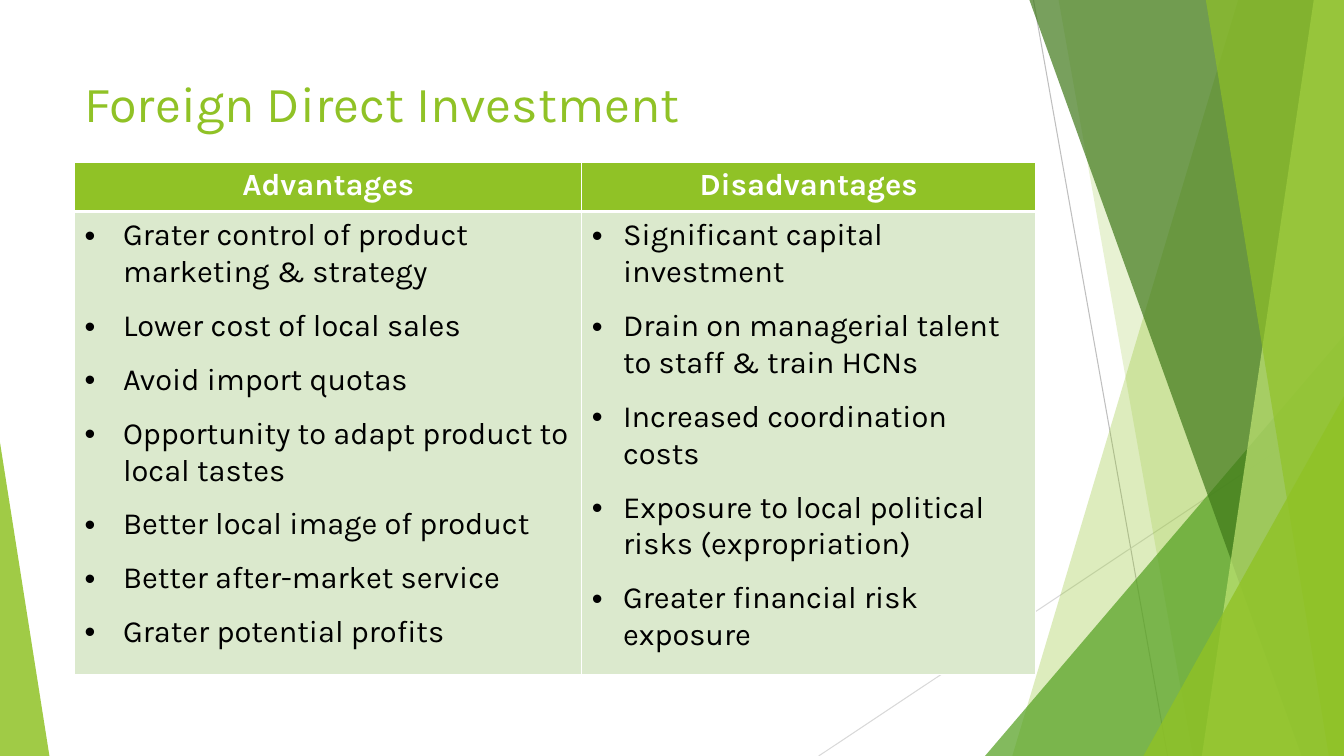
"""Build the Foreign Direct Investment slide with its two-column comparison table."""
import pptx
import pptx.dml.color
import pptx.enum.shapes
import pptx.enum.text
import pptx.oxml
import pptx.oxml.ns
import pptx.util
from pptx.util import Inches

GREEN = "90C226"
WIDTH, HEIGHT = 13.33, 7.5
NAMESPACE = pptx.oxml.ns.nsdecls("a")


def paint(fill, color):
    fill.solid()
    fill.fore_color.rgb = pptx.dml.color.RGBColor.from_string(color)


def write(paragraph, text, size=22, color="000000", bold=False, centered=False, indent=None):
    run = paragraph.add_run()
    run.text = text
    run.font.name = "Karla"
    run.font.size = pptx.util.Pt(size)
    run.font.bold = bold
    paint(run.font.fill, color)
    if centered:
        paragraph.alignment = pptx.enum.text.PP_ALIGN.CENTER
    if indent:
        paragraph.line_spacing = pptx.util.Pt(26.4)
        paragraph.space_before = paragraph.space_after = pptx.util.Pt(6)
        properties = paragraph._p.get_or_add_pPr()
        properties.set("marL", str(Inches(indent)))
        properties.set("indent", str(-Inches(indent)))
        for markup in ('<a:buFont {} typeface="Arial"/>', '<a:buChar {} char="•"/>'):
            properties.append(pptx.oxml.parse_xml(markup.format(NAMESPACE)))


presentation = pptx.Presentation()
presentation.slide_width = Inches(WIDTH)
presentation.slide_height = Inches(HEIGHT)
slide = presentation.slides.add_slide(presentation.slide_layouts[6])
shapes = slide.shapes

for start_x, start_y, end_x, color in [(10.25, 0, 11.58, "BFBFBF"), (WIDTH, 4.03, 8.12, "D9D9D9")]:
    line = shapes.add_connector(
        pptx.enum.shapes.MSO_CONNECTOR.STRAIGHT,
        Inches(start_x), Inches(start_y), Inches(end_x), Inches(HEIGHT))
    line.line.width = pptx.util.Pt(0.75)
    paint(line.line.fill, color)
    line._element.spPr.append(pptx.oxml.parse_xml(f"<a:effectLst {NAMESPACE}/>"))

bands = [
    ("band", 12.28, 10.04, GREEN, 30),
    ("band", 10.5, 11.83, GREEN, 20),
    ("triangle", 3.33, 9.77, "54A021", 72),
    ("band", 10.21, 12.91, "3F7819", 70),
    ("band", 13.03, 11.92, "C0E474", 70),
    ("band", 11.96, 13.18, GREEN, 65),
    ("triangle", 3.93, 11.34, GREEN, 80),
    ("left triangle", 4.39, 0, GREEN, 85),
]
for kind, top, left, color, opacity in bands:
    if kind == "band":
        corners = [(WIDTH, 0), (WIDTH, HEIGHT), (left, HEIGHT)]
        builder = shapes.build_freeform(Inches(top), 0)
        builder.add_line_segments([(Inches(x), Inches(y)) for x, y in corners], close=True)
        facet = builder.convert_to_shape()
    else:
        on_left = kind == "left triangle"
        facet = shapes.add_shape(
            pptx.enum.shapes.MSO_SHAPE.ISOSCELES_TRIANGLE, Inches(left), Inches(top),
            Inches(0.49 if on_left else WIDTH - left), Inches(HEIGHT - top))
        facet.adjustments[0] = 0 if on_left else 1
    paint(facet.fill, color)
    facet.line.fill.background()
    facet.shadow.inherit = False
    fill_color = facet._element.xpath("./p:spPr/a:solidFill/a:srgbClr")[0]
    fill_color.append(pptx.oxml.parse_xml(f'<a:alpha {NAMESPACE} val="{opacity * 1000}"/>'))

title = shapes.add_textbox(Inches(0.74), Inches(0.67), Inches(9.4), Inches(0.85))
title.text_frame.word_wrap = True
write(title.text_frame.paragraphs[0], "Foreign Direct Investment", size=36, color=GREEN)

columns = [
    ("Advantages", 5.03, 0.38, [
        "Grater control of product marketing & strategy",
        "Lower cost of local sales",
        "Avoid import quotas",
        "Opportunity to adapt product to local tastes",
        "Better local image of product",
        "Better after-market service",
        "Grater potential profits",
    ]),
    ("Disadvantages", 4.5, 0.31, [
        "Significant capital investment",
        "Drain on managerial talent to staff & train HCNs",
        "Increased coordination costs",
        "Exposure to local political risks (expropriation)",
        "Greater financial risk exposure",
    ]),
]
table = shapes.add_table(2, 2, Inches(0.74), Inches(1.61), Inches(9.53), Inches(5.08)).table
table.rows[0].height, table.rows[1].height = Inches(0.49), Inches(4.59)
for index, (heading, width, indent, points) in enumerate(columns):
    table.columns[index].width = Inches(width)
    header, body = table.cell(0, index), table.cell(1, index)
    write(header.text_frame.paragraphs[0], heading, color="FFFFFF", bold=True, centered=True)
    for number, point in enumerate(points):
        frame = body.text_frame
        paragraph = frame.add_paragraph() if number else frame.paragraphs[0]
        write(paragraph, point, indent=indent)
    for cell, color in [(header, GREEN), (body, "DBE9CD")]:
        paint(cell.fill, color)
        for position, side in enumerate("LRTB"):
            thick = (cell is header and side == "B") or (cell is body and side == "T")
            border = (f'<a:ln{side} {NAMESPACE} w="{pptx.util.Pt(3 if thick else 1)}"><a:solidFill>'
                      f'<a:srgbClr val="FFFFFF"/></a:solidFill></a:ln{side}>')
            cell._tc.get_or_add_tcPr().insert(position, pptx.oxml.parse_xml(border))

presentation.save("out.pptx")
